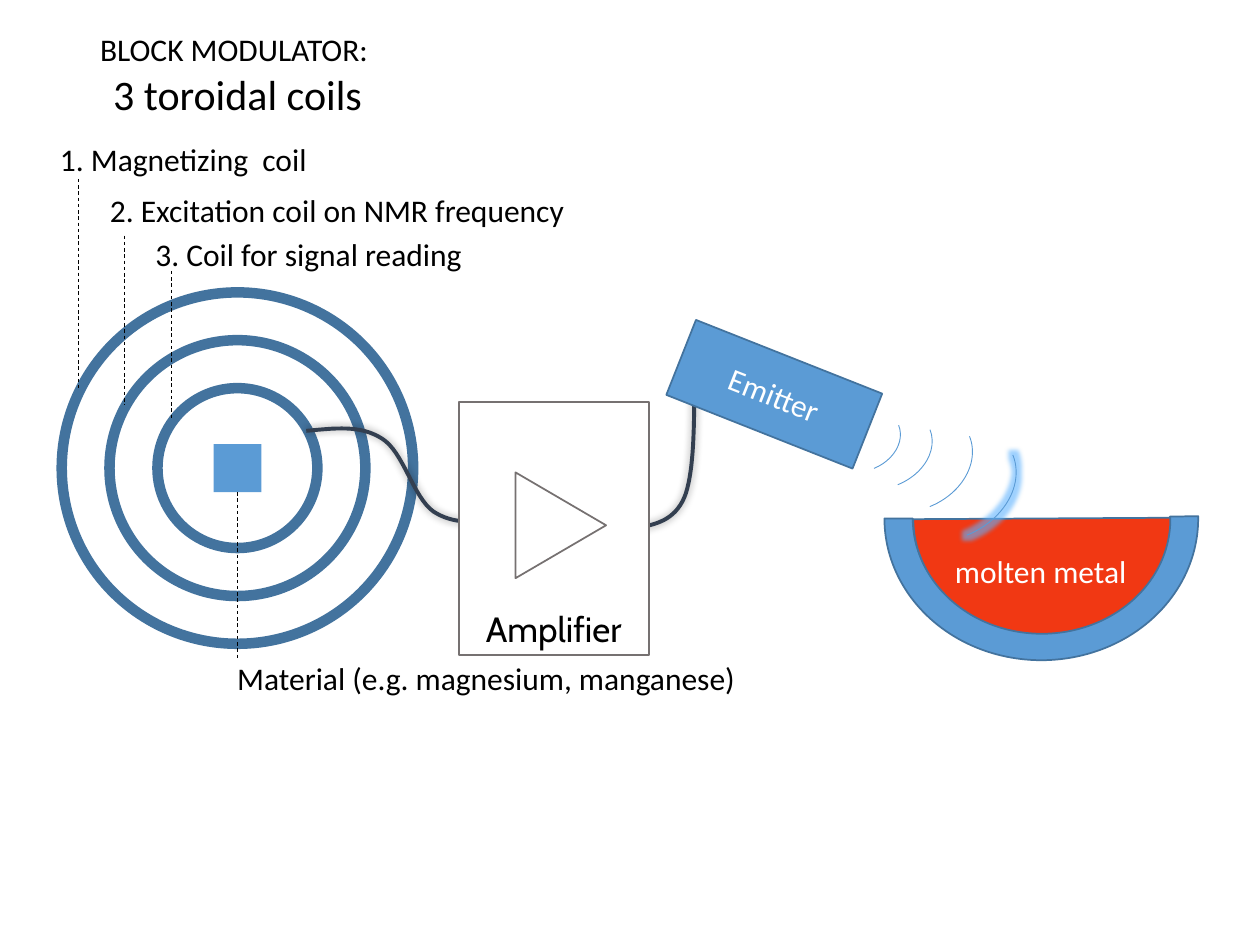
from lxml.etree import SubElement
from pptx import Presentation
from pptx.dml.color import RGBColor
from pptx.enum.dml import MSO_LINE
from pptx.enum.shapes import MSO_CONNECTOR, MSO_SHAPE as Preset
from pptx.enum.text import MSO_ANCHOR as Anchor, MSO_AUTO_SIZE as AutoSize, PP_ALIGN as Align
from pptx.oxml.ns import qn
from pptx.util import Pt

COLORS = {
    "black": "000000", "white": "FFFFFF", "blue": "5B9BD5", "edge": "43739E",
    "wire": "333F50", "metal": "F13813", "gray": "767171", "glow": "5FB3FF",
}
TITLE = [("BLOCK MODULATOR: ", 18), ("3 toroidal coils", 24)]
TITLE_AREA = (49, 13.7, 173.5, 58.3)
COIL_CENTER = (135.7, 267.5)
COIL_RADII = [100.4, 73.1, 45.7]
SAMPLE_SIDE = 27.4
LABELS = [
    ("Material (e.g. magnesium, manganese)", 126.7, 373, 302.4),
    ("1. Magnetizing  coil", 25.9, 76.3, 157.7),
    ("2. Excitation coil on NMR frequency", 54, 105.8, 277.2),
    ("3. Coil for signal reading", 80.6, 131, 191.5),
]
METAL_LABEL = ("molten metal", 537.8, 311.8, 113.8)
LABEL_HEIGHT = 28.8
LEADERS = [(44.6, 102.2, 221.8), (71.3, 134.6, 231.1), (97.9, 154.8, 239.8)]
SAMPLE_LEADER_END = 377.3
WAVES = [
    (475.2, 229, 35.3, 44.6), (482.4, 227.5, 44.6, 57.6),
    (491.8, 226.8, 57.6, 72), (507.6, 234, 65.5, 82.8),
]
EMITTER_WIRE = [
    (364.3, 301.7), (375.1, 299.5), (385.2, 297.4), (391, 284.4),
    (396, 272.2), (396.7, 248.4), (396.7, 225.4),
]
COIL_WIRE = [
    (175, 246.2), (190.8, 244.8), (205.9, 242.6), (218.2, 250.6), (230.4, 257.8),
    (236.2, 284.4), (247.7, 292.3), (258.5, 299.5), (272.2, 298.8), (285.8, 297.4),
]
CURVE_STEPS = 16


def rgb(name):
    return RGBColor.from_string(COLORS[name])


def points(values):
    return [Pt(value) for value in values]


def add_span(para, text, size=18, color="black", font="Calibri"):
    para.alignment = Align.CENTER
    span = para.add_run()
    span.text = text
    span.font.size = Pt(size)
    span.font.name = font
    span.font.color.rgb = rgb(color)


def paint(shape, fill=None, line=None, width=1):
    shape.shadow.inherit = False
    if fill:
        shape.fill.solid()
        shape.fill.fore_color.rgb = rgb(fill)
    else:
        shape.fill.background()
    if line:
        shape.line.color.rgb = rgb(line)
        shape.line.width = Pt(width)
    else:
        shape.line.fill.background()


def add_preset(page, preset, area, fill=None, line=None, width=1, rotation=0, adjustments=()):
    shape = page.shapes.add_shape(preset, *points(area))
    paint(shape, fill, line, width)
    shape.rotation = rotation
    for index, value in enumerate(adjustments):
        shape.adjustments[index] = value
    return shape


def add_effect(shape, kind, color, opacity, **settings):
    effects = shape.element.spPr.find(qn("a:effectLst"))
    effect = SubElement(effects, qn(f"a:{kind}"), settings)
    tint = SubElement(effect, qn("a:srgbClr"), val=COLORS[color])
    SubElement(tint, qn("a:alpha"), val=str(opacity * 1000))


def add_label(page, text, left, top, width, color="black"):
    box = page.shapes.add_textbox(*points((left, top, width, LABEL_HEIGHT)))
    box.text_frame.word_wrap = False
    box.text_frame.auto_size = AutoSize.SHAPE_TO_FIT_TEXT
    add_span(box.text_frame.paragraphs[0], text, color=color)


def add_leader(page, x, top, bottom):
    leader = page.shapes.add_connector(MSO_CONNECTOR.STRAIGHT, *points((x, top, x, bottom)))
    leader.line.color.rgb = rgb("black")
    leader.line.width = Pt(0.5)
    leader.line.dash_style = MSO_LINE.DASH
    SubElement(leader.element.spPr, qn("a:effectLst"))
    return leader


def curve_point(controls, t):
    weights = ((1 - t) ** 3, 3 * t * (1 - t) ** 2, 3 * t ** 2 * (1 - t), t ** 3)
    return [Pt(sum(w * c[axis] for w, c in zip(weights, controls))) for axis in (0, 1)]


def add_wire(page, controls):
    trace = [
        curve_point(controls[start:start + 4], step / CURVE_STEPS)
        for start in range(0, len(controls) - 1, 3)
        for step in range(1, CURVE_STEPS + 1)
    ]
    builder = page.shapes.build_freeform(*points(controls[0]))
    builder.add_line_segments(trace, close=False)
    wire = builder.convert_to_shape()
    paint(wire, line="wire", width=2.25)
    add_effect(wire, "outerShdw", "black", 40, blurRad=str(Pt(5)), dist="0", dir="0")


def add_title(page):
    title = page.shapes.title
    title.left, title.top, title.width, title.height = points(TITLE_AREA)
    frame = title.text_frame
    frame.word_wrap = False
    frame.auto_size = AutoSize.SHAPE_TO_FIT_TEXT
    frame.vertical_anchor = Anchor.TOP
    for index, (text, size) in enumerate(TITLE):
        para = frame.add_paragraph() if index else frame.paragraphs[0]
        para.space_before = Pt(0)
        add_span(para, text, size)


def add_coils(page):
    x, y = COIL_CENTER
    for radius in COIL_RADII:
        area = (x - radius, y - radius, 2 * radius, 2 * radius)
        add_preset(page, Preset.OVAL, area, line="edge", width=6)
    half = SAMPLE_SIDE / 2
    area = (x - half, y - half, SAMPLE_SIDE, SAMPLE_SIDE)
    sample = add_preset(page, Preset.RECTANGLE, area, fill="blue")
    for label in LABELS:
        add_label(page, *label)
    for leader in LEADERS:
        add_leader(page, *leader)
    add_leader(page, x, y + half, SAMPLE_LEADER_END).begin_connect(sample, 2)


def add_crucible(page):
    crucible = add_preset(page, Preset.BLOCK_ARC, (505.4, 215.3, 179.3, 162), "blue", "edge",
                          adjustments=(108, 0.51, 0.1))
    crucible.element.spPr.xfrm.set("flipV", "1")
    add_preset(page, Preset.CHORD, (529.9, 223.2, 131, 146.9), "metal", "edge",
               rotation=270, adjustments=(53.62, 162))
    add_label(page, *METAL_LABEL, color="white")


def add_emitter(page):
    emitter = add_preset(page, Preset.RECTANGLE, (385.2, 202.3, 114.5, 46.1), "blue", "edge",
                         rotation=21.6)
    emitter.text_frame.vertical_anchor = Anchor.MIDDLE
    add_span(emitter.text_frame.paragraphs[0], "Emitter", color="white")
    waves = [add_preset(page, Preset.ARC, area, line="blue", width=0.5, rotation=68.1)
             for area in WAVES]
    add_effect(waves[-1], "glow", "glow", 60, rad=str(Pt(5)))


def add_amplifier(page):
    amplifier = add_preset(page, Preset.RECTANGLE, (262.1, 229.7, 108.7, 144.7), "white", "gray")
    amplifier.text_frame.vertical_anchor = Anchor.BOTTOM
    add_span(amplifier.text_frame.paragraphs[0], "Amplifier", 20, font="Cabin")
    add_preset(page, Preset.ISOSCELES_TRIANGLE, (290.2, 274.3, 60.5, 51.8), line="gray",
               rotation=90)


def main():
    deck = Presentation()
    deck.slide_width, deck.slide_height = Pt(720), Pt(540)
    page = deck.slides.add_slide(deck.slide_layouts[5])
    add_title(page)
    add_wire(page, EMITTER_WIRE)
    add_coils(page)
    add_crucible(page)
    add_wire(page, COIL_WIRE)
    add_emitter(page)
    add_amplifier(page)
    deck.save("out.pptx")


if __name__ == "__main__":
    main()
